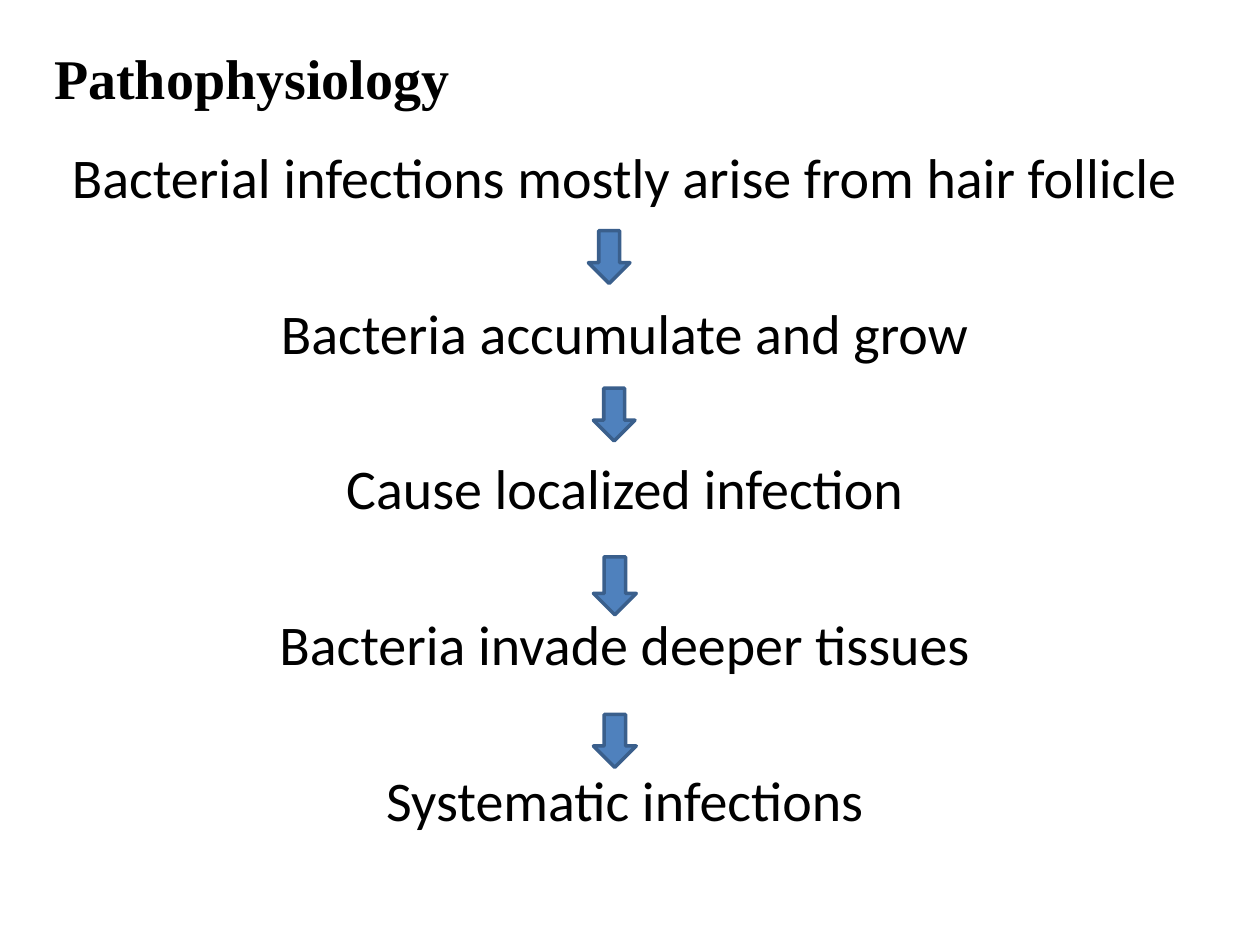
from pptx import Presentation
from pptx.dml.color import RGBColor
from pptx.enum.shapes import MSO_SHAPE
from pptx.enum.text import MSO_ANCHOR, MSO_AUTO_SIZE, PP_ALIGN
from pptx.oxml.ns import qn
from pptx.util import Inches, Pt

DOWN = MSO_SHAPE.DOWN_ARROW
LEFT, CENTER = PP_ALIGN.LEFT, PP_ALIGN.CENTER
TOP, MIDDLE = MSO_ANCHOR.TOP, MSO_ANCHOR.MIDDLE
NO_FIT = MSO_AUTO_SIZE.NONE

BLACK = RGBColor(0x00, 0x00, 0x00)
BLUE = RGBColor(0x4F, 0x81, 0xBD)
NAVY = RGBColor(0x3A, 0x5F, 0x8C)

TITLE_FONT = {"name": "Times New Roman", "size": Pt(32), "bold": True}
STEP_FONT = {"name": "Calibri", "size": Pt(32), "bold": False}
STEP_GAP = Pt(50.6)

STEPS = [
    "Bacterial infections mostly arise from hair follicle",
    "Bacteria accumulate and grow",
    "Cause localized infection",
    "Bacteria invade deeper tissues",
    "Systematic infections",
]
ARROWS = [
    (4.67, 1.83, 0.33, 0.42),
    (4.71, 3.08, 0.33, 0.42),
    (4.71, 4.42, 0.34, 0.46),
    (4.71, 5.67, 0.34, 0.42),
]


def place(shape, *box):
    for name, value in zip(("left", "top", "width", "height"), box):
        setattr(shape, name, Inches(value))


def set_frame(frame, anchor):
    frame.word_wrap = True
    frame.auto_size = NO_FIT
    frame.vertical_anchor = anchor


def write(para, text, look, align):
    para.alignment = align
    run = para.add_run()
    run.text = text
    for name, value in look.items():
        setattr(run.font, name, value)
    run.font.color.rgb = BLACK


def drop_bullet(para):
    props = para._p.get_or_add_pPr()
    props.set("marL", "0")
    props.set("indent", "0")
    props.append(props.makeelement(qn("a:buNone"), {}))


def add_title(slide, text):
    title = slide.shapes.title
    place(title, 0.33, 0.3, 9.17, 0.62)
    set_frame(title.text_frame, MIDDLE)
    write(title.text_frame.paragraphs[0], text, TITLE_FONT, LEFT)


def add_steps(slide, steps):
    body = slide.placeholders[1]
    place(body, 0.42, 1.08, 9.08, 6)
    frame = body.text_frame
    set_frame(frame, TOP)
    for i, step in enumerate(steps):
        para = frame.add_paragraph() if i else frame.paragraphs[0]
        write(para, step, STEP_FONT, CENTER)
        para.space_before = STEP_GAP if i else Pt(2)
        drop_bullet(para)


def add_arrow(slide, box):
    arrow = slide.shapes.add_shape(DOWN, *map(Inches, box))
    arrow.shadow.inherit = False
    arrow.fill.solid()
    arrow.fill.fore_color.rgb = BLUE
    arrow.line.color.rgb = NAVY
    arrow.line.width = Pt(2)


def main():
    deck = Presentation()
    deck.slide_width, deck.slide_height = Inches(10), Inches(7.5)
    slide = deck.slides.add_slide(deck.slide_layouts[1])
    add_title(slide, "Pathophysiology")
    add_steps(slide, STEPS)
    for box in ARROWS:
        add_arrow(slide, box)
    deck.save("out.pptx")


if __name__ == "__main__":
    main()
